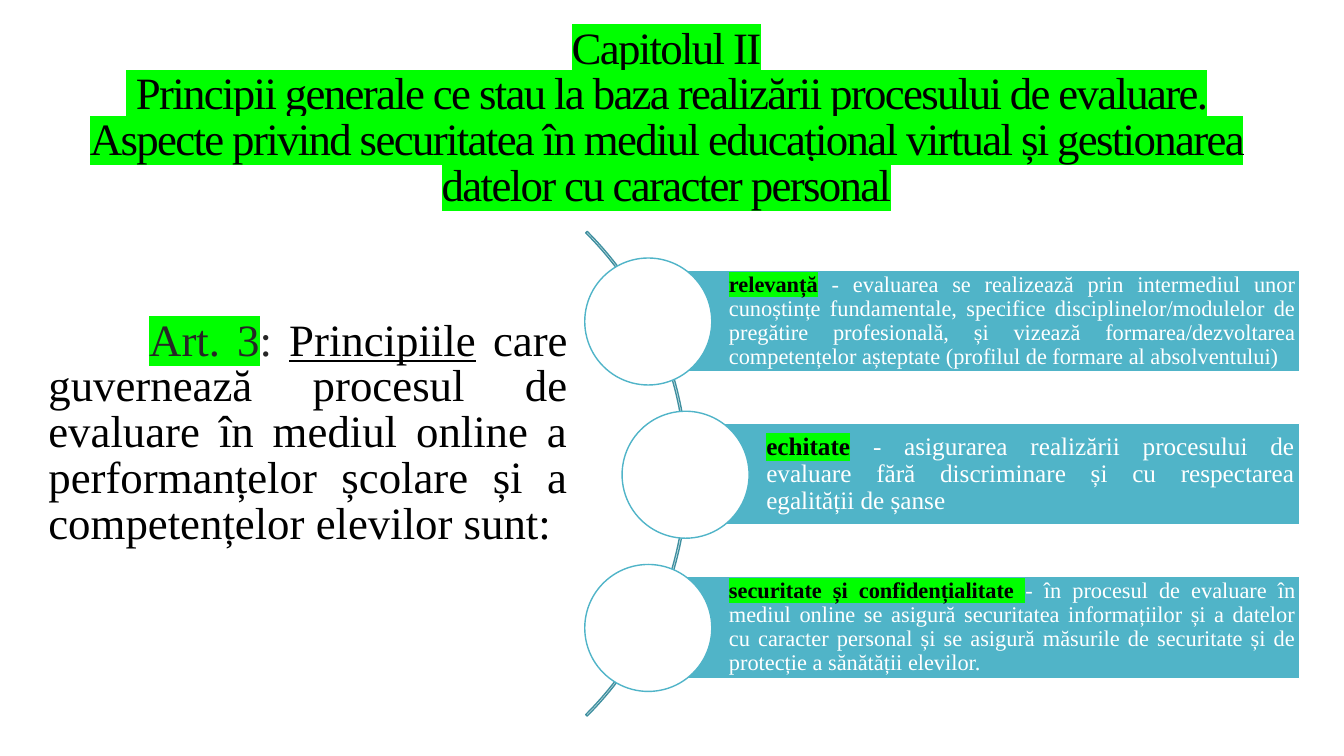
from lxml.etree import SubElement
from pptx import Presentation
from pptx.dml.color import RGBColor
from pptx.enum.shapes import MSO_SHAPE as Shape
from pptx.enum.text import MSO_ANCHOR as Anchor, PP_ALIGN as Align
from pptx.oxml.ns import qn
from pptx.util import Pt

PX = 9144  # 100 px to the inch
FONT = "Times New Roman"
COLORS = {
    "black": "000000",
    "dark": "262626",
    "white": "FFFFFF",
    "teal": "50B4C8",
    "arc": "4090A0",
    "marker": "00FF00",
}
BAR_RIGHT, BAR_HEIGHT, FIRST_BAR_TOP, ROW_PITCH = 1289, 101, 268, 152
CIRCLE_SIZE = 126
PRINCIPLES = [
    # bar left, font size, inset, term, explanation
    (643, 16, 4, "relevanță",
     " - evaluarea se realizează prin intermediul unor cunoștințe fundamentale, "
     "specifice disciplinelor/modulelor de pregătire profesională, și vizează "
     "formarea/dezvoltarea competențelor așteptate (profilul de formare al absolventului)"),
    (680, 18, 5, "echitate",
     " - asigurarea realizării procesului de evaluare fără discriminare și cu "
     "respectarea egalității de șanse"),
    (643, 16, 4, "securitate și confidențialitate ",
     "- în procesul de evaluare în mediul online se asigură securitatea informațiilor "
     "și a datelor cu caracter personal și se asigură măsurile de securitate și de "
     "protecție a sănătății elevilor."),
]


def rgb(name):
    return RGBColor.from_string(COLORS[name])


def add_run(paragraph, text, size, color="black", marked=False, bold=False,
            underline=False, spacing=None):
    """Append a run; marked puts the green highlighter behind it."""
    run = paragraph.add_run()
    run.text = text
    font = run.font
    font.size, font.name = Pt(size), FONT
    font.bold, font.underline = bold, underline
    font.color.rgb = rgb(color)
    properties = run._r.get_or_add_rPr()
    if spacing is not None:
        properties.set("spc", str(spacing))
    if marked:
        highlight = SubElement(properties, qn("a:highlight"))
        SubElement(highlight, qn("a:srgbClr")).set("val", COLORS["marker"])
        properties.find(qn("a:solidFill")).addnext(highlight)


def set_frame(shape, insets, align, line_spacing):
    """Prepare a wrapped, middle-anchored frame and return its first paragraph."""
    frame = shape.text_frame
    frame.word_wrap = True
    frame.vertical_anchor = Anchor.MIDDLE
    (frame.margin_left, frame.margin_top,
     frame.margin_right, frame.margin_bottom) = [inset * PX for inset in insets]
    paragraph = frame.paragraphs[0]
    paragraph.alignment = align
    paragraph.line_spacing = line_spacing
    return paragraph


def add_text_box(slide, box, insets, align):
    text_box = slide.shapes.add_textbox(*[length * PX for length in box])
    return set_frame(text_box, insets, align, 0.85)


def add_figure(slide, kind, box, line, fill=None):
    figure = slide.shapes.add_shape(kind, *[length * PX for length in box])
    figure.shadow.inherit = False
    if fill:
        figure.fill.solid()
        figure.fill.fore_color.rgb = rgb(fill)
    else:
        figure.fill.background()
    figure.line.color.rgb = rgb(line)
    figure.line.width = Pt(1)
    return figure


def add_title(slide):
    title = add_text_box(slide, (72, 55, 1178, 181), (10, 5, 10, 60), Align.CENTER)
    style = dict(size=32, marked=True, spacing=-120)
    add_run(title, "Capitolul II", **style)
    title.add_line_break()
    add_run(title, " Principii generale ce stau la baza realizării procesului de evaluare. "
            "Aspecte privind securitatea în mediul educațional virtual și gestionarea "
            "datelor cu caracter personal", **style)


def add_article(slide):
    article = add_text_box(slide, (37, 247, 536, 367), (11, 5, 10, 5), Align.JUSTIFY)
    article.space_before = Pt(6)
    article._p.get_or_add_pPr().set("indent", str(100 * PX))
    add_run(article, "Art. 3", 32, "dark", marked=True)
    add_run(article, ": ", 32, "dark")
    add_run(article, "Principiile", 32, underline=True)
    add_run(article, " care guvernează procesul de evaluare în mediul online a "
            "performanțelor școlare și a competențelor elevilor sunt:", 32)


def add_arc(slide):
    arc = add_figure(slide, Shape.BLOCK_ARC, (2, 130, 680, 680), "arc")
    for index, value in enumerate((189, 27, 0.003)):
        arc.adjustments[index] = value


def add_principle(slide, top, left, size, inset, term, explanation):
    bar = add_figure(slide, Shape.RECTANGLE,
                     (left, top, BAR_RIGHT - left, BAR_HEIGHT), "white", "teal")
    paragraph = set_frame(bar, (80, inset, inset, inset), Align.JUSTIFY, 0.9)
    add_run(paragraph, term, size, marked=True, bold=True)
    add_run(paragraph, explanation, size, "white")
    circle_top = top - (CIRCLE_SIZE - BAR_HEIGHT) // 2
    add_figure(slide, Shape.OVAL, (left - CIRCLE_SIZE // 2, circle_top,
                                   CIRCLE_SIZE, CIRCLE_SIZE), "teal", "white")


def main():
    deck = Presentation()
    deck.slide_width, deck.slide_height = 1333 * PX, 750 * PX
    slide = deck.slides.add_slide(deck.slide_layouts[6])
    add_title(slide)
    add_article(slide)
    add_arc(slide)
    for row, principle in enumerate(PRINCIPLES):
        add_principle(slide, FIRST_BAR_TOP + row * ROW_PITCH, *principle)
    deck.save("out.pptx")


if __name__ == "__main__":
    main()
